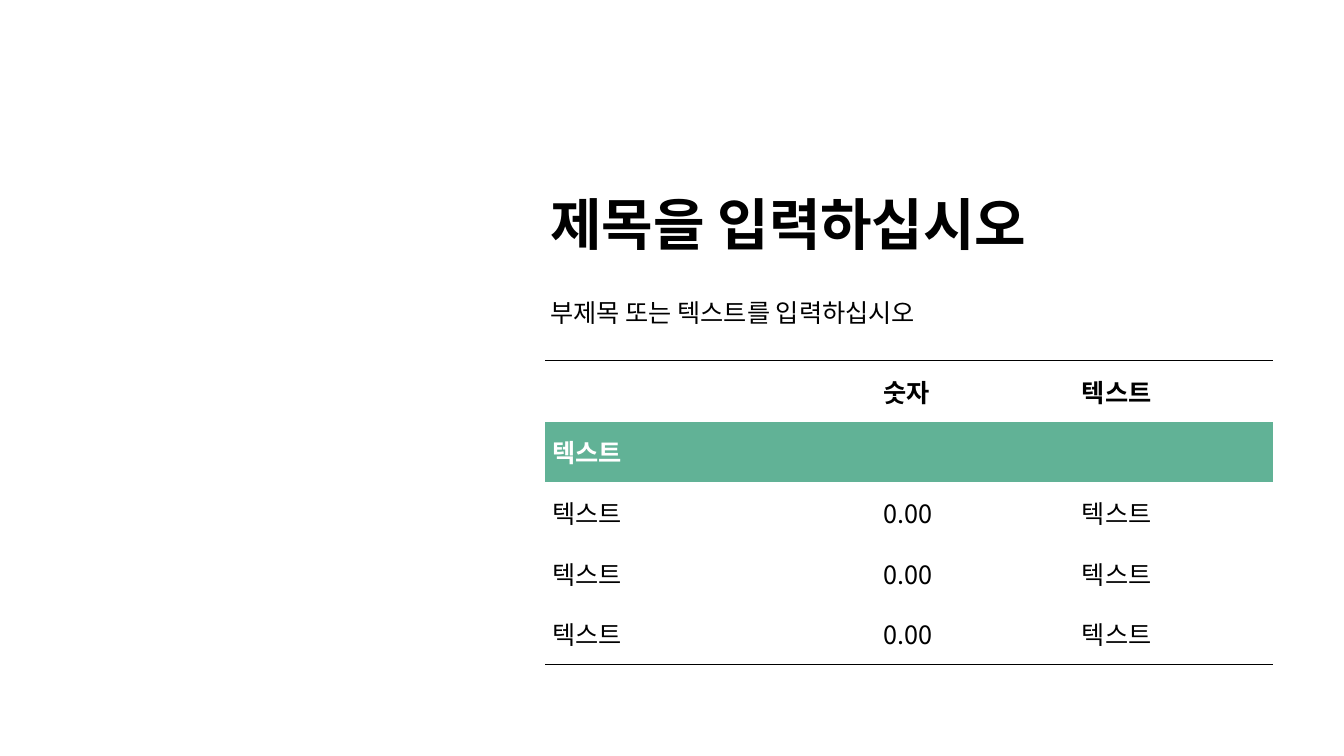
from lxml import etree
from pptx import Presentation
from pptx.dml.color import RGBColor
from pptx.enum.text import MSO_ANCHOR, PP_ALIGN
from pptx.oxml.ns import qn
from pptx.util import Inches, Pt

TOP, MID = MSO_ANCHOR.TOP, MSO_ANCHOR.MIDDLE
LEFT = PP_ALIGN.LEFT
FONT = "Noto Sans CJK KR"
BLACK, WHITE, GREEN = "000000", "FFFFFF", "61B296"
NO_STYLE = "{2D5ABB26-0587-4C30-8999-92F81FD0307C}"


def write(frame, text, size, color, bold=False):
    para = frame.paragraphs[0]
    para.alignment = LEFT
    run = para.add_run()
    run.text = text
    font = run.font
    font.size, font.bold, font.name = Pt(size), bold, FONT
    font.color.rgb = RGBColor.from_string(color)
    etree.SubElement(run._r.rPr, qn("a:ea"), typeface=FONT)
    return para


def border(cell, side, color, width):
    line = etree.SubElement(cell._tc.get_or_add_tcPr(), qn("a:" + side), w=str(Pt(width)))
    fill = etree.SubElement(line, qn("a:solidFill"))
    etree.SubElement(fill, qn("a:srgbClr"), val=color)


prs = Presentation()
prs.slide_width, prs.slide_height = Inches(13.33), Inches(7.5)
slide = prs.slides.add_slide(prs.slide_layouts[5])

title = slide.shapes.title
title.left, title.top = Inches(5.36), Inches(1.91)
title.width, title.height = Inches(7.33), Inches(1.03)
sub = slide.shapes.add_textbox(Inches(5.36), Inches(2.93), Inches(5.6), Inches(0.54))
heads = [
    (title, "제목을 입력하십시오", 40, True),
    (sub, "부제목 또는 텍스트를 입력하십시오", 18, False),
]
for box, text, size, bold in heads:
    frame = box.text_frame
    frame.word_wrap = False
    frame.vertical_anchor = TOP
    write(frame, text, size, BLACK, bold).line_spacing = 0.9

rows = [["", "숫자", "텍스트"], ["텍스트", "", ""]] + [["텍스트", "0.00", "텍스트"]] * 3
shares = [5, 3, 3]
wide, high = Inches(7.22), Inches(3.01)
table = slide.shapes.add_table(
    len(rows), len(shares), Inches(5.41), Inches(3.58), wide, high
).table
table.first_row = table.horz_banding = False
table._tbl.tblPr.find(qn("a:tableStyleId")).text = NO_STYLE
for col, share in zip(table.columns, shares):
    col.width = wide * share // sum(shares)

last = len(rows) - 1
for r, row in enumerate(rows):
    table.rows[r].height = high // len(rows)
    band = r == 1
    for c, text in enumerate(row):
        cell = table.cell(r, c)
        cell.vertical_anchor = MID
        cell.margin_left = cell.margin_right = Inches(0.07)
        cell.margin_top = cell.margin_bottom = Inches(0.04)
        if r == 0:
            border(cell, "lnT", BLACK, 1)
        if r > 2:
            border(cell, "lnT", WHITE, 0.25)
        if r == last:
            border(cell, "lnB", BLACK, 1)
        elif r > 1:
            border(cell, "lnB", WHITE, 0.25)
        cell.fill.solid()
        cell.fill.fore_color.rgb = RGBColor.from_string(GREEN if band else WHITE)
        if not band:
            tint = cell._tc.tcPr.find(qn("a:solidFill"))[0]
            etree.SubElement(tint, qn("a:alpha"), val="50000")
        if text:
            write(cell.text_frame, text, 18, WHITE if band else BLACK, r < 2)

prs.save("out.pptx")
